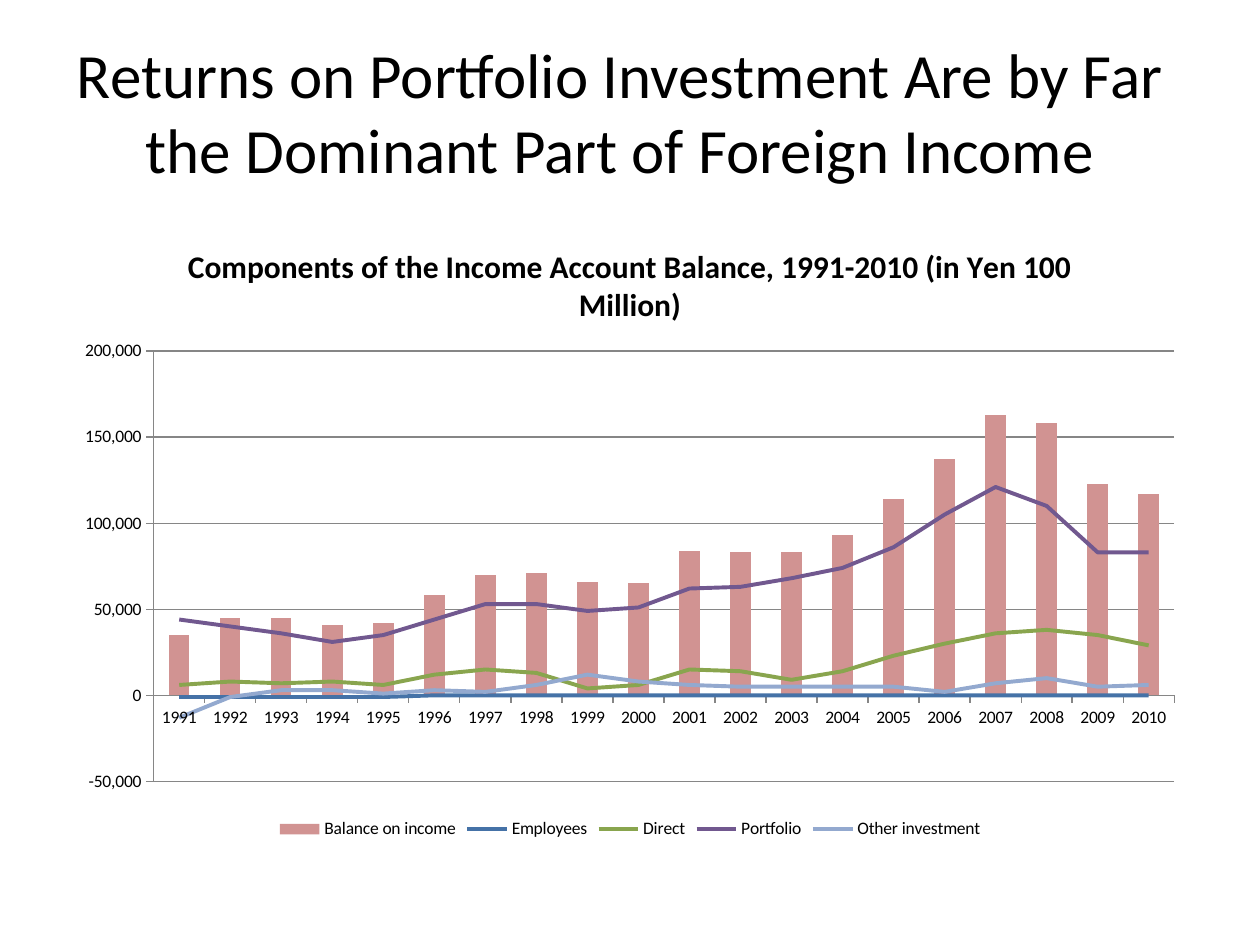
from copy import deepcopy
from dataclasses import dataclass

from lxml import etree
from pptx import Presentation
from pptx import util as u
from pptx.chart import data as chart_data
from pptx.dml.color import RGBColor
from pptx.enum import chart as ch
from pptx.enum import text
from pptx.oxml import ns, xmlchemy

EMU_PER_PX = 914400 / 126


def px(length: int) -> u.Emu:
    return u.Emu(round(length * EMU_PER_PX))


@dataclass(frozen=True)
class Theme:
    font: str = "Calibri"
    ink: str = "000000"
    rule: str = "868686"
    heading_size: int = 36
    chart_title_size: int = 18
    label_size: int = 10
    line_width: float = 2.25
    rule_width: float = 0.75


@dataclass(frozen=True)
class Component:
    name: str
    color: str
    thousands: tuple[int, ...]


THEME = Theme()
YEARS = [str(year) for year in range(1991, 2011)]

# The first component is drawn as columns, the others as lines
COMPONENTS = (
    Component("Balance on income", "D19392",
              (35, 45, 45, 41, 42, 58, 70, 71, 66, 65,
               84, 83, 83, 93, 114, 137, 163, 158, 123, 117)),
    Component("Employees", "4572A7", (-1,) * 5 + (0,) * 15),
    Component("Direct", "89A54E",
              (6, 8, 7, 8, 6, 12, 15, 13, 4, 6,
               15, 14, 9, 14, 23, 30, 36, 38, 35, 29)),
    Component("Portfolio", "71588F",
              (44, 40, 36, 31, 35, 44, 53, 53, 49, 51,
               62, 63, 68, 74, 86, 105, 121, 110, 83, 83)),
    Component("Other investment", "93A9CF",
              (-13, -1, 3, 3, 1, 3, 2, 6, 12, 8,
               6, 5, 5, 5, 5, 2, 7, 10, 5, 6)),
)


def format_font(font, *, size: int, bold: bool = False) -> None:
    font.name = THEME.font
    font.size = u.Pt(size)
    font.bold = bold
    font.color.rgb = RGBColor.from_string(THEME.ink)


def write(frame, content: str, *, size: int, bold: bool = False) -> None:
    paragraph = frame.paragraphs[0]
    paragraph.alignment = text.PP_ALIGN.CENTER
    run = paragraph.add_run()
    run.text = content
    format_font(run.font, size=size, bold=bold)


def stroke(line, color: str, width: float) -> None:
    line.color.rgb = RGBColor.from_string(color)
    line.width = u.Pt(width)


def child(parent, tag: str, value) -> None:
    etree.SubElement(parent, ns.qn(f"c:{tag}"), val=str(value))


def move_to_lines(chart) -> None:
    """Turn all column series but the first into a line plot on the same axes."""
    columns = chart.plots[0]._element
    lines = xmlchemy.OxmlElement("c:lineChart")
    child(lines, "grouping", "standard")
    child(lines, "varyColors", 0)
    for series in columns.findall(ns.qn("c:ser"))[1:]:
        for column_only in series.findall(ns.qn("c:invertIfNegative")):
            series.remove(column_only)
        lines.append(series)
    child(lines, "marker", 1)
    for axis_id in columns.findall(ns.qn("c:axId")):
        lines.append(deepcopy(axis_id))
    columns.addnext(lines)


def place_plot(chart, **fractions: float) -> None:
    """Fix the inner plot area as fractions of the chart."""
    plot_area = chart.plots[0]._element.getparent()
    for old in plot_area.findall(ns.qn("c:layout")):
        plot_area.remove(old)
    layout = xmlchemy.OxmlElement("c:layout")
    manual = etree.SubElement(layout, ns.qn("c:manualLayout"))
    child(manual, "layoutTarget", "inner")
    child(manual, "xMode", "edge")
    child(manual, "yMode", "edge")
    for tag, fraction in fractions.items():
        child(manual, tag, fraction)
    plot_area.insert(0, layout)


def add_income_chart(slide) -> None:
    income = chart_data.CategoryChartData(number_format="#,##0")
    income.categories = YEARS
    for component in COMPONENTS:
        income.add_series(component.name, [v * 1000 for v in component.thousands])
    chart = slide.shapes.add_chart(
        ch.XL_CHART_TYPE.COLUMN_CLUSTERED,
        px(63), px(220), px(1134), px(624), income).chart
    format_font(chart.font, size=THEME.label_size)

    # Title and legend
    chart.has_title = True
    write(chart.chart_title.text_frame,
          "Components of the Income Account Balance, 1991-2010 (in Yen 100 Million)",
          size=THEME.chart_title_size, bold=True)
    chart.has_legend = True
    chart.legend.position = ch.XL_LEGEND_POSITION.BOTTOM
    chart.legend.include_in_layout = False

    # Columns and lines
    move_to_lines(chart)
    column_plot, line_plot = chart.plots
    column_plot.vary_by_categories = False
    column_plot.gap_width = 150
    balance = column_plot.series[0].format.fill
    balance.solid()
    balance.fore_color.rgb = RGBColor.from_string(COMPONENTS[0].color)
    for series, component in zip(line_plot.series, COMPONENTS[1:]):
        stroke(series.format.line, component.color, THEME.line_width)
        series.marker.style = ch.XL_MARKER_STYLE.NONE
        series.smooth = False

    # Axes and gridlines
    amounts = chart.value_axis
    amounts.minimum_scale = -50000
    amounts.maximum_scale = 200000
    amounts.major_unit = 50000
    amounts.has_major_gridlines = True
    amounts.tick_labels.number_format = "#,##0"
    amounts.tick_labels.number_format_is_linked = False
    for axis in (chart.category_axis, amounts):
        axis.major_tick_mark = ch.XL_TICK_MARK.OUTSIDE
        stroke(axis.format.line, THEME.rule, THEME.rule_width)
    stroke(amounts.major_gridlines.format.line, THEME.rule, THEME.rule_width)
    place_plot(chart, x=0.08, y=0.21, w=0.9, h=0.69)


def main() -> None:
    deck = Presentation()
    deck.slide_width, deck.slide_height = px(1260), px(945)
    slide = deck.slides.add_slide(deck.slide_layouts[5])

    # Heading
    heading = slide.shapes.title
    heading.left, heading.top = px(53), px(32)
    heading.width, heading.height = px(1134), px(158)
    heading.text_frame.vertical_anchor = text.MSO_ANCHOR.MIDDLE
    write(heading.text_frame,
          "Returns on Portfolio Investment Are by Far the Dominant Part of Foreign Income",
          size=THEME.heading_size)

    add_income_chart(slide)
    deck.save("out.pptx")


if __name__ == "__main__":
    main()
